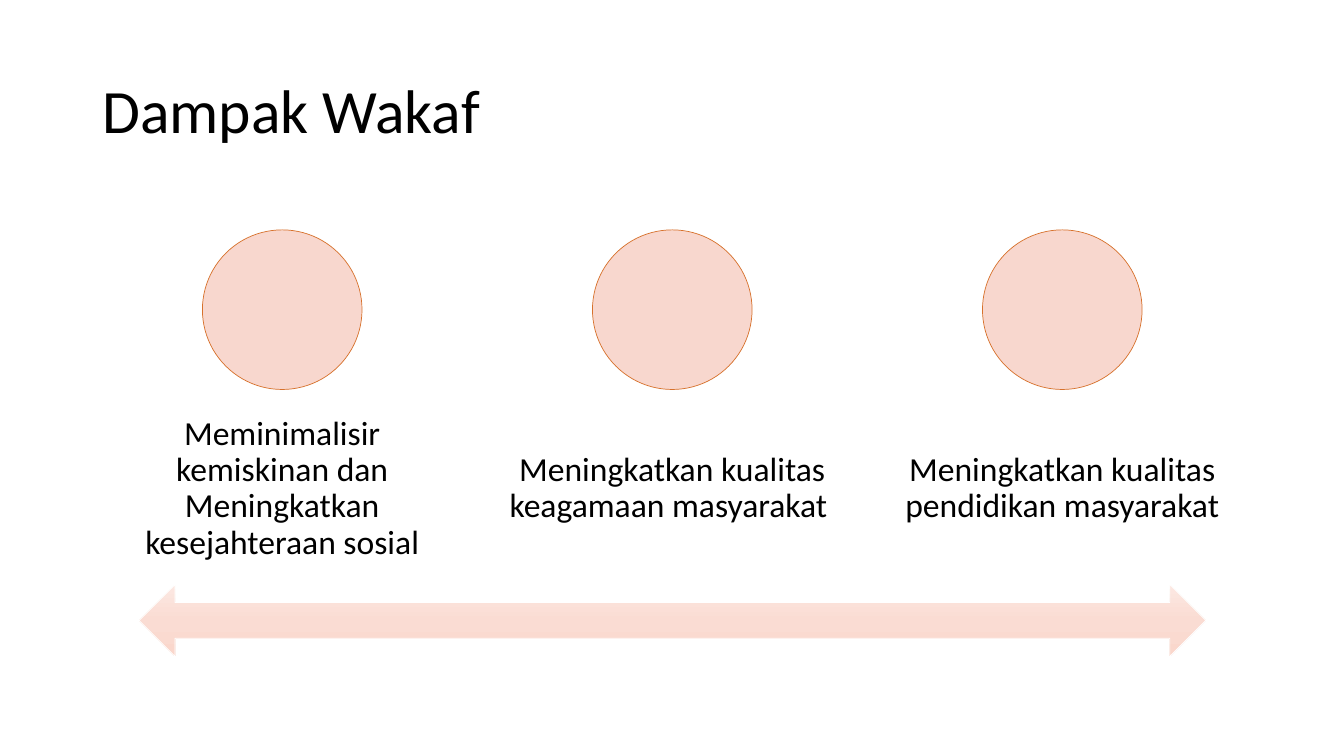
from copy import deepcopy
from dataclasses import dataclass

from pptx import Presentation
from pptx.dml.color import RGBColor
from pptx.enum.shapes import MSO_SHAPE
from pptx.enum.text import MSO_ANCHOR, PP_ALIGN
from pptx.shapes.autoshape import Shape
from pptx.slide import Slide
from pptx.text.text import TextFrame
from pptx.util import Pt


@dataclass(frozen=True)
class Theme:
    font: str = "Calibri"
    text: str = "000000"
    circle: str = "F8D7CE"
    outline: str = "D7712C"
    arrow_line: str = "FFFFFF"
    arrow_stops: tuple[str, ...] = ("FCE8E2", "FADCD3", "FAD7CC")
    title_size: int = 44
    caption_size: int = 24
    line_width: float = 0.5


@dataclass(frozen=True)
class Impact:
    caption: str
    left: float


THEME = Theme()
COLUMN_LEFT, COLUMN_WIDTH, COLUMN_STEP = 66.24, 270.72, 278.6
CIRCLE_SIZE = 114
CAPTIONS = (
    "Meminimalisir kemiskinan dan Meningkatkan kesejahteraan sosial",
    "Meningkatkan kualitas keagamaan masyarakat ",
    "Meningkatkan kualitas pendidikan masyarakat",
)
IMPACTS = [Impact(c, COLUMN_LEFT + i * COLUMN_STEP) for i, c in enumerate(CAPTIONS)]


def set_text(tf: TextFrame, text: str, size: int, align: PP_ALIGN) -> None:
    tf.text = text
    tf.word_wrap = True
    tf.vertical_anchor = MSO_ANCHOR.MIDDLE
    p = tf.paragraphs[0]
    p.alignment = align
    p.line_spacing = 0.9
    p.font.name = THEME.font
    p.font.size = Pt(size)
    p.font.color.rgb = RGBColor.from_string(THEME.text)


def set_outline(sp: Shape, color: str) -> None:
    sp.shadow.inherit = False
    sp.line.color.rgb = RGBColor.from_string(color)
    sp.line.width = Pt(THEME.line_width)


def add_title(s: Slide, text: str) -> None:
    sp = s.shapes.title
    sp.left, sp.top, sp.width, sp.height = Pt(66), Pt(28.8), Pt(828), Pt(104.4)
    set_text(sp.text_frame, text, THEME.title_size, PP_ALIGN.LEFT)


def add_impact(s: Slide, impact: Impact) -> None:
    box = s.shapes.add_textbox(Pt(impact.left), Pt(280.8), Pt(COLUMN_WIDTH), Pt(136.8))
    tf = box.text_frame
    tf.margin_left = tf.margin_right = tf.margin_top = tf.margin_bottom = Pt(13.7)
    set_text(tf, impact.caption, THEME.caption_size, PP_ALIGN.CENTER)
    left = impact.left + (COLUMN_WIDTH - CIRCLE_SIZE) / 2
    sp = s.shapes.add_shape(
        MSO_SHAPE.OVAL, Pt(left), Pt(164.2), Pt(CIRCLE_SIZE), Pt(CIRCLE_SIZE)
    )
    sp.fill.solid()
    sp.fill.fore_color.rgb = RGBColor.from_string(THEME.circle)
    set_outline(sp, THEME.outline)


def add_arrow(s: Slide) -> None:
    sp = s.shapes.add_shape(
        MSO_SHAPE.LEFT_RIGHT_ARROW, Pt(99.4), Pt(417.6), Pt(761.8), Pt(51.2)
    )
    sp.fill.gradient()
    sp.fill.gradient_angle = 270
    stops = sp._element.spPr.xpath(".//a:gsLst")[0]
    stops.insert(1, deepcopy(stops[0]))
    for i, (stop, color) in enumerate(zip(sp.fill.gradient_stops, THEME.arrow_stops)):
        stop.position = i / 2
        stop.color.rgb = RGBColor.from_string(color)
    set_outline(sp, THEME.arrow_line)


def main() -> None:
    """Build the slide on the impacts of wakaf and save it."""
    prs = Presentation()
    prs.slide_width, prs.slide_height = Pt(960), Pt(540)
    s = prs.slides.add_slide(prs.slide_layouts[5])
    add_title(s, "Dampak Wakaf")
    for impact in IMPACTS:
        add_impact(s, impact)
    add_arrow(s)
    prs.save("out.pptx")


if __name__ == "__main__":
    main()
